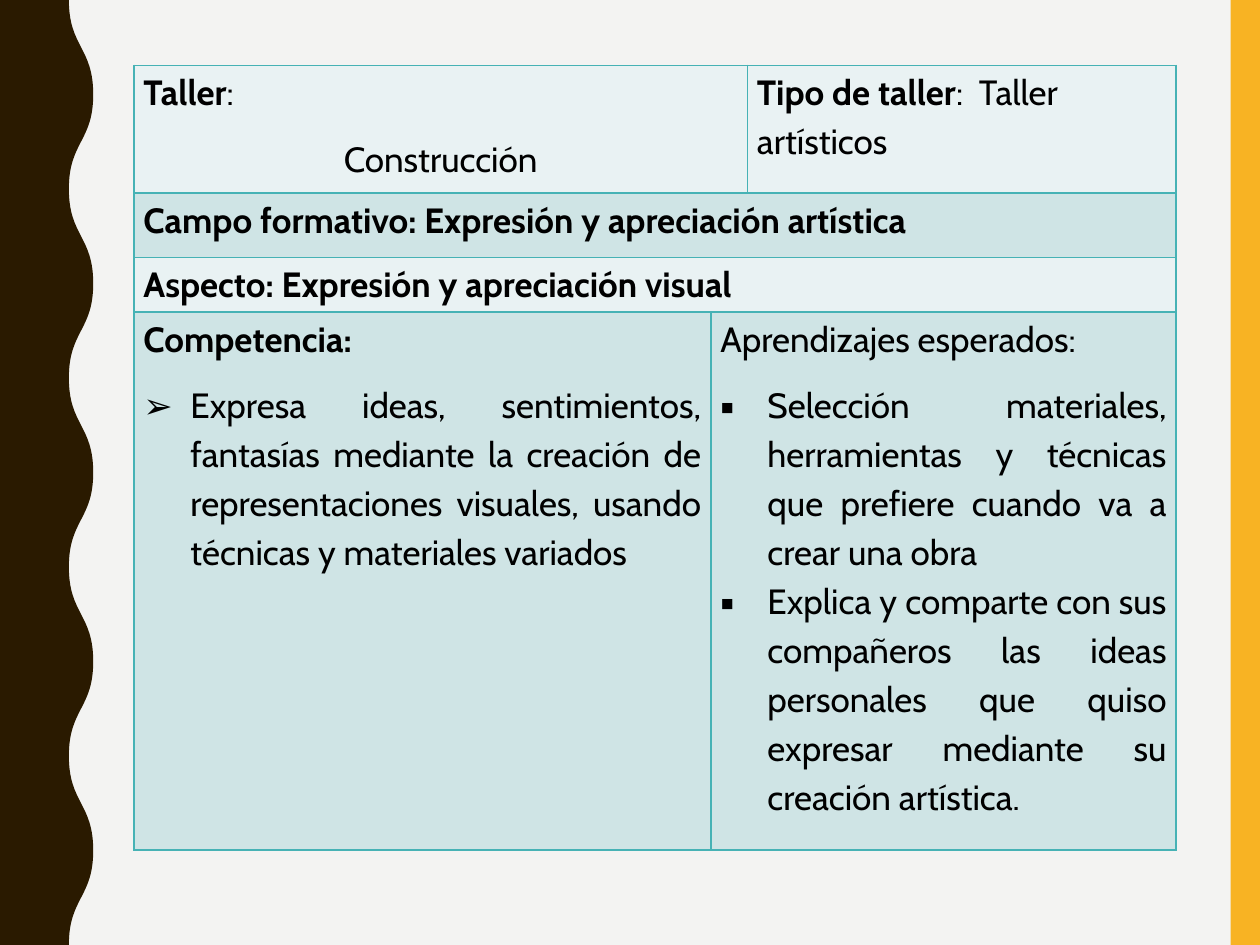
from lxml.etree import SubElement
from pptx import Presentation
from pptx.dml.color import RGBColor
from pptx.enum.shapes import MSO_SHAPE as SHAPE
from pptx.enum.text import PP_ALIGN as ALIGN
from pptx.oxml.ns import qn
from pptx.util import Cm, Pt

PAPER = RGBColor(0xF3, 0xF3, 0xF2)
GOLD = RGBColor(0xF8, 0xB3, 0x23)
BROWN = RGBColor(0x2A, 0x1A, 0x00)
TEAL = RGBColor(0x46, 0xB2, 0xB5)
PALE = RGBColor(0xE9, 0xF2, 0xF3)
AQUA = RGBColor(0xCF, 0xE4, 0xE5)
BLACK = RGBColor(0, 0, 0)
WIDTH, HEIGHT = 25.4, 19.05


def add_borders(cell):
    tcPr = cell._tc.get_or_add_tcPr()
    for side in ("lnL", "lnR", "lnT", "lnB"):
        ln = SubElement(tcPr, qn(f"a:{side}"), w=str(Pt(1)))
        fill = SubElement(ln, qn("a:solidFill"))
        SubElement(fill, qn("a:srgbClr"), val=str(TEAL))


def add_bullet(p, char):
    pPr = p._p.get_or_add_pPr()
    pPr.set("marL", str(Cm(0.95)))
    pPr.set("indent", str(-Cm(0.95)))
    SubElement(pPr, qn("a:buFont"), typeface="Cabin")
    SubElement(pPr, qn("a:buChar"), char=char)


prs = Presentation()
prs.slide_width, prs.slide_height = Cm(WIDTH), Cm(HEIGHT)
s = prs.slides.add_slide(prs.slide_layouts[6])
s.background.fill.solid()
s.background.fill.fore_color.rgb = PAPER

band = s.shapes.add_shape(SHAPE.RECTANGLE, Cm(24.81), 0, Cm(0.59), Cm(HEIGHT))

trough, crest, halves = 1.39, 1.88, 10
half = HEIGHT / halves
points = []
for i in range(halves):
    start, end = (trough, crest) if i % 2 == 0 else (crest, trough)
    middle = (i + 0.5) * half
    points += [(start, middle), (end, middle), (end, (i + 1) * half)]
points += [(0, HEIGHT)] * 3 + [(0, 0)] * 3
fb = s.shapes.build_freeform(Cm(trough), 0)
fb.add_line_segments([(Cm(x), Cm(y)) for x, y in points], close=True)
wave = fb.convert_to_shape()

# Each three straight segments become one Bézier curve
lines = list(wave._element.iter(qn("a:lnTo")))
for i in range(0, len(points), 3):
    curve = lines[i].makeelement(qn("a:cubicBezTo"))
    lines[i].addprevious(curve)
    for line in lines[i:i + 3]:
        curve.append(line[0])
        line.getparent().remove(line)

for sp, color in ((band, GOLD), (wave, BROWN)):
    sp.shadow.inherit = False
    sp.fill.solid()
    sp.fill.fore_color.rgb = color
    sp.line.fill.background()

cols = [11.63, 0.74, 8.64]
rows = [2.57, 1.3, 1.1, 10.84]
table = s.shapes.add_table(len(rows), len(cols), Cm(2.7), Cm(1.32),
                           Cm(sum(cols)), Cm(sum(rows))).table
for col, width in zip(table.columns, cols):
    col.width = Cm(width)
for row, height in zip(table.rows, rows):
    row.height = Cm(height)

for r, row in enumerate(table.rows):
    for cell in row.cells:
        add_borders(cell)
        cell.fill.solid()
        cell.fill.fore_color.rgb = AQUA if r % 2 else PALE
        cell.margin_left = cell.margin_right = Cm(0.19)
        cell.margin_top = cell.margin_bottom = 0

L, C, J = ALIGN.LEFT, ALIGN.CENTER, ALIGN.JUSTIFY
contents = {
    (0, 0, 1): [("Taller", ":", L, "", 10), ("", "Construcción", C, "", 10)],
    (0, 2, 2): [("Tipo de taller", ":  Taller artísticos", L, "", 10)],
    (1, 0, 2): [("Campo formativo: Expresión y apreciación artística", "", L, "", 10)],
    (2, 0, 2): [("Aspecto: Expresión y apreciación visual", "", L, "", 10)],
    (3, 0, 0): [
        ("Competencia:", "", J, "", 10),
        ("", "Expresa ideas, sentimientos, fantasías mediante la creación de "
         "representaciones visuales, usando técnicas y materiales variados", J, "➢", 10),
    ],
    (3, 1, 2): [
        ("", "Aprendizajes esperados:", J, "", 10),
        ("", "Selección materiales, herramientas y técnicas que prefiere "
         "cuando va a crear una obra", J, "▪", 0),
        ("", "Explica y comparte con sus compañeros las ideas personales que "
         "quiso expresar mediante su creación artística.", J, "▪", 10),
    ],
}
for (row, first, last), paragraphs in contents.items():
    cell = table.cell(row, first)
    if last > first:
        cell.merge(table.cell(row, last))
    tf = cell.text_frame
    for i, (bold, plain, align, bullet, after) in enumerate(paragraphs):
        p = tf.add_paragraph() if i else tf.paragraphs[0]
        p.alignment = align
        p.line_spacing = 1.15
        p.space_after = Pt(after)
        if bullet:
            add_bullet(p, bullet)
        for text, is_bold in ((bold, True), (plain, False)):
            if text:
                r = p.add_run()
                r.text = text
                r.font.name = "Cabin"
                r.font.size = Pt(20)
                r.font.bold = is_bold
                r.font.color.rgb = BLACK

prs.save("out.pptx")
